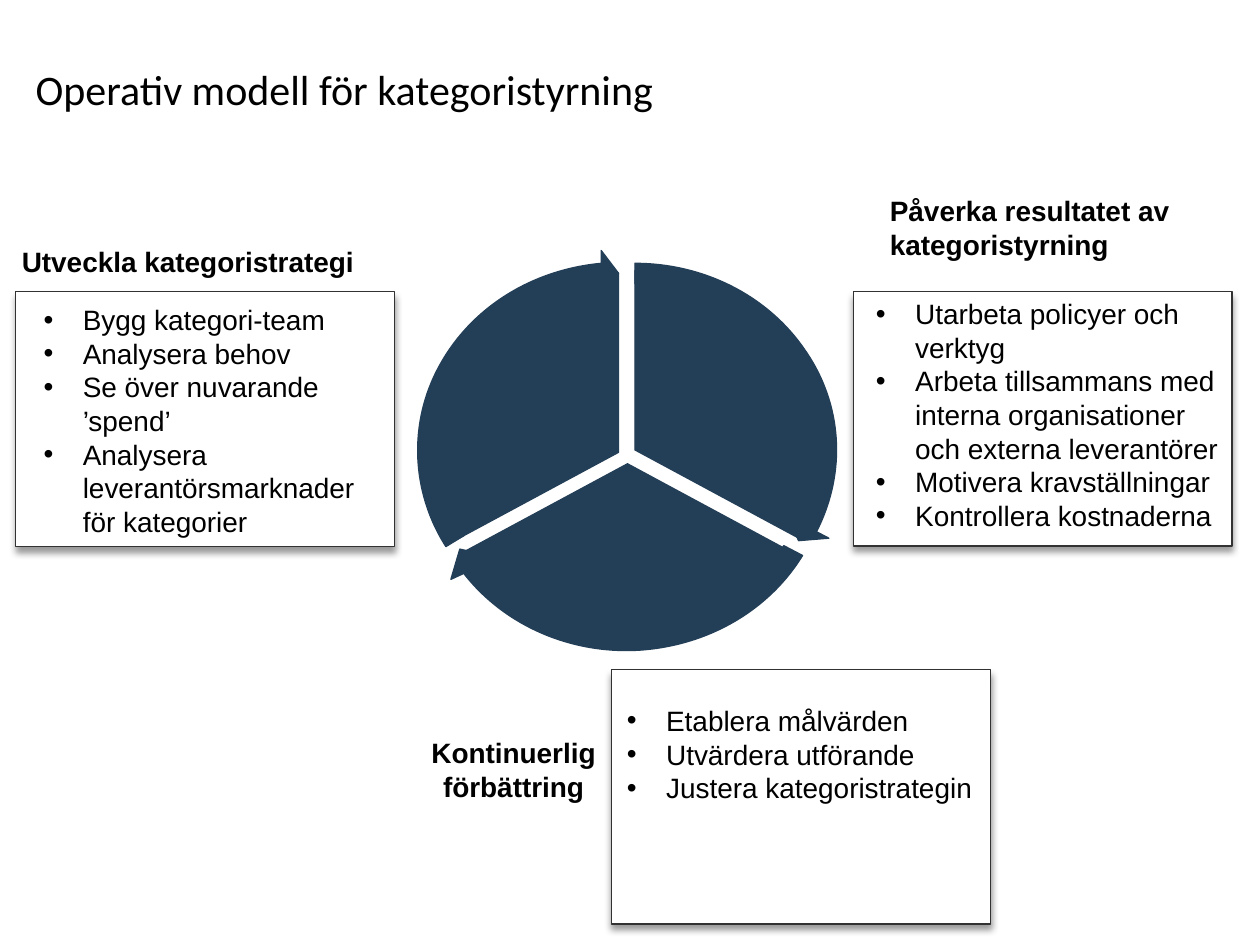
"""Build a slide showing the three-phase operating model for category management."""
from dataclasses import dataclass
from math import cos, radians, sin, tan

from lxml import etree
from pptx import Presentation
from pptx import util as u
from pptx.dml.color import RGBColor
from pptx.enum import shapes, text
from pptx.oxml import ns

BLACK = RGBColor(0x00, 0x00, 0x00)
WHITE = RGBColor(0xFF, 0xFF, 0xFF)
OUTLINE = RGBColor(0x32, 0x32, 0x32)
NAVY = RGBColor(0x23, 0x3E, 0x57)

Point = tuple[float, float]
Segment = tuple[Point, ...]
Frame = tuple[float, float, float, float]

RADIUS_X, RADIUS_Y = 3.87, 3.61
ARROW_WIDTH, ARROW_HEIGHT = 8.71, 8.1


@dataclass(frozen=True)
class Label:
    words: str
    frame: Frame
    size: int = 16
    font: str = "Arial"
    bold: bool = True
    wrap: bool = True
    align: text.PP_ALIGN = text.PP_ALIGN.LEFT
    anchor: text.MSO_ANCHOR = text.MSO_ANCHOR.TOP
    inset: float = 0.13


@dataclass(frozen=True)
class Phase:
    label: Label
    panel: Frame
    bullets: Frame
    items: tuple[str, ...]


@dataclass(frozen=True)
class Sector:
    center: Point
    start: int


@dataclass(frozen=True)
class Arrow:
    corner: Point
    outer: Segment
    head: Segment
    inner: Segment


TITLE = Label("Operativ modell för kategoristyrning", (0.47, 0.28, 21.89, 3), size=24,
              font="Calibri", bold=False, anchor=text.MSO_ANCHOR.MIDDLE, inset=0.25)

PHASES = (
    Phase(Label("Kontinuerlig förbättring", (7.18, 14.7, 6.35, 2.16),
                align=text.PP_ALIGN.CENTER),
          (12.33, 13.5, 7.64, 5.13), (11.12, 14.06, 10.36, 2.46),
          ("Etablera målvärden", "Utvärdera utförande", "Justera kategoristrategin")),
    Phase(Label("Påverka resultatet av kategoristyrning", (17.69, 3.78, 7.59, 1.63)),
          (17.2, 5.88, 7.64, 5.13), (16.14, 5.86, 8.86, 5.08),
          ("Utarbeta policyer och verktyg",
           "Arbeta tillsammans med interna organisationer och externa leverantörer",
           "Motivera kravställningar", "Kontrollera kostnaderna")),
    Phase(Label("Utveckla kategoristrategi", (0.19, 4.8, 7.29, 0.94), wrap=False),
          (0.32, 5.88, 7.64, 5.14), (-0.64, 5.98, 8.41, 5.92),
          ("Bygg kategori-team", "Analysera behov", "Se över nuvarande ’spend’",
           "Analysera leverantörsmarknader för kategorier")),
)

SECTORS = (Sector((12.8, 9.07), -90), Sector((12.65, 9.35), 30), Sector((12.47, 9.12), 150))

ARROWS = (
    Arrow((8.46, 5.03),
          ((12.8, 5.31), (14.2, 5.31), (15.49, 5.97), (16.23, 7.06),
           (16.99, 8.15), (17.07, 9.53), (16.46, 10.72)),
          ((16.71, 10.85), (16.1, 10.9), (15.85, 10.36)),
          ((16.1, 10.49), (16.61, 9.45), (16.54, 8.23), (15.88, 7.26),
           (15.19, 6.3), (14.05, 5.72), (12.8, 5.72))),
    Arrow((8.28, 5.28),
          ((16.18, 11.2), (15.49, 12.32), (14.25, 13.03), (12.85, 13.11),
           (11.48, 13.18), (10.16, 12.6), (9.35, 11.56)),
          ((9.09, 11.68), (9.27, 11.07), (9.98, 11.23)),
          ((9.73, 11.35), (10.46, 12.27), (11.63, 12.75), (12.88, 12.7),
           (14.1, 12.62), (15.19, 11.99), (15.8, 11))),
    Arrow((8.13, 5.03),
          ((8.99, 11.02), (8.28, 9.91), (8.23, 8.51), (8.86, 7.37),
           (9.5, 6.2), (10.72, 5.44), (12.12, 5.31)),
          ((12.12, 5.05), (12.47, 5.51), (12.12, 5.99)),
          ((12.12, 5.74), (10.9, 5.84), (9.8, 6.53), (9.22, 7.57),
           (8.66, 8.59), (8.71, 9.83), (9.35, 10.8))),
)


def lengths(values: tuple[float, ...]) -> list[u.Cm]:
    return [u.Cm(value) for value in values]


def paint(shape, fill: RGBColor, line: RGBColor) -> None:
    shape.fill.solid()
    shape.fill.fore_color.rgb = fill
    shape.line.color.rgb = line
    shape.line.width = u.Pt(0.75)
    shape.shadow.inherit = False


def draw_panel(page, frame: Frame) -> None:
    panel = page.shapes.add_shape(shapes.MSO_SHAPE.RECTANGLE, *lengths(frame))
    paint(panel, WHITE, OUTLINE)
    effects = panel.element.spPr.find(ns.qn("a:effectLst"))
    shadow = etree.SubElement(effects, ns.qn("a:outerShdw"), blurRad=str(u.Pt(4)),
                              dist=str(u.Pt(3)), dir="5400000", rotWithShape="0")
    color = etree.SubElement(shadow, ns.qn("a:srgbClr"), val="000000")
    etree.SubElement(color, ns.qn("a:alpha"), val="40000")


def add_span(para, words: str, size: int, font: str, bold: bool) -> None:
    span = para.add_run()
    span.text = words
    span.font.size = u.Pt(size)
    span.font.name = font
    span.font.bold = bold
    span.font.color.rgb = BLACK


def draw_label(page, label: Label) -> None:
    frame = page.shapes.add_textbox(*lengths(label.frame)).text_frame
    frame.word_wrap = label.wrap
    frame.vertical_anchor = label.anchor
    frame.margin_top = frame.margin_bottom = u.Cm(label.inset)
    para = frame.paragraphs[0]
    para.alignment = label.align
    add_span(para, label.words, label.size, label.font, label.bold)


def draw_bullets(page, bounds: Frame, items: tuple[str, ...]) -> None:
    frame = page.shapes.add_textbox(*lengths(bounds)).text_frame
    frame.word_wrap = True
    for index, item in enumerate(items):
        para = frame.add_paragraph() if index else frame.paragraphs[0]
        add_span(para, item, 16, "Arial", False)
        props = para._p.get_or_add_pPr()
        props.set("marL", str(u.Cm(2.06)))
        props.set("indent", str(u.Cm(-0.79)))
        etree.SubElement(props, ns.qn("a:buFont"), typeface="Arial")
        etree.SubElement(props, ns.qn("a:buChar"), char="•")


def draw_outline(group, start: Point, segments: list[Segment], frame: Frame) -> None:
    """Draw one-point segments as lines and three-point segments as Bézier curves."""
    builder = group.shapes.build_freeform(*lengths(start))
    builder.add_line_segments([lengths(point) for part in segments for point in part], close=True)
    shape = builder.convert_to_shape()
    left, top, width, height = lengths(frame)
    shift_x, shift_y = shape.left - left, shape.top - top
    outline = next(shape.element.iter(ns.qn("a:path")))
    outline.set("w", str(width))
    outline.set("h", str(height))
    for point in outline.iter(ns.qn("a:pt")):
        point.set("x", str(int(point.get("x")) + shift_x))
        point.set("y", str(int(point.get("y")) + shift_y))
    lines = iter(outline.findall(ns.qn("a:lnTo")))
    for part in segments:
        first, *others = [next(lines) for _ in part]
        if others:
            first.tag = ns.qn("a:cubicBezTo")
        for other in others:
            first.append(other[0])
            outline.remove(other)
    shape.left, shape.top, shape.width, shape.height = left, top, width, height
    paint(shape, NAVY, NAVY)


def curves(controls: Segment) -> list[Segment]:
    return [controls[1:4], controls[4:7]]


def draw_sector(group, sector: Sector) -> None:
    x, y = sector.center
    pull = 4 / 3 * tan(radians(15))

    def rim(angle: int, slide: float = 0) -> Point:
        a = radians(angle)
        return (x + RADIUS_X * (cos(a) - slide * sin(a)),
                y + RADIUS_Y * (sin(a) + slide * cos(a)))

    start = rim(sector.start)
    arcs = [(rim(a, pull), rim(a + 60, -pull), rim(a + 60))
            for a in (sector.start, sector.start + 60)]
    draw_outline(group, start, [*arcs, (sector.center,), (start,)],
                 (x - RADIUS_X, y - RADIUS_Y, 2 * RADIUS_X, 2 * RADIUS_Y))


def draw_arrow(group, arrow: Arrow) -> None:
    corners = [(point,) for point in (*arrow.head, arrow.inner[0])]
    draw_outline(group, arrow.outer[0],
                 [arrow.outer[:1], *curves(arrow.outer), *corners, *curves(arrow.inner)],
                 (*arrow.corner, ARROW_WIDTH, ARROW_HEIGHT))


def main() -> None:
    deck = Presentation()
    deck.slide_width, deck.slide_height = u.Cm(25.4), u.Cm(19.05)
    page = deck.slides.add_slide(deck.slide_layouts[6])
    for phase in PHASES:
        draw_panel(page, phase.panel)
    draw_label(page, TITLE)
    wheel = page.shapes.add_group_shape()
    for sector in SECTORS:
        draw_sector(wheel, sector)
    for arrow in ARROWS:
        draw_arrow(wheel, arrow)
    for phase in PHASES:
        draw_label(page, phase.label)
        draw_bullets(page, phase.bullets, phase.items)
    deck.save("out.pptx")


if __name__ == "__main__":
    main()
